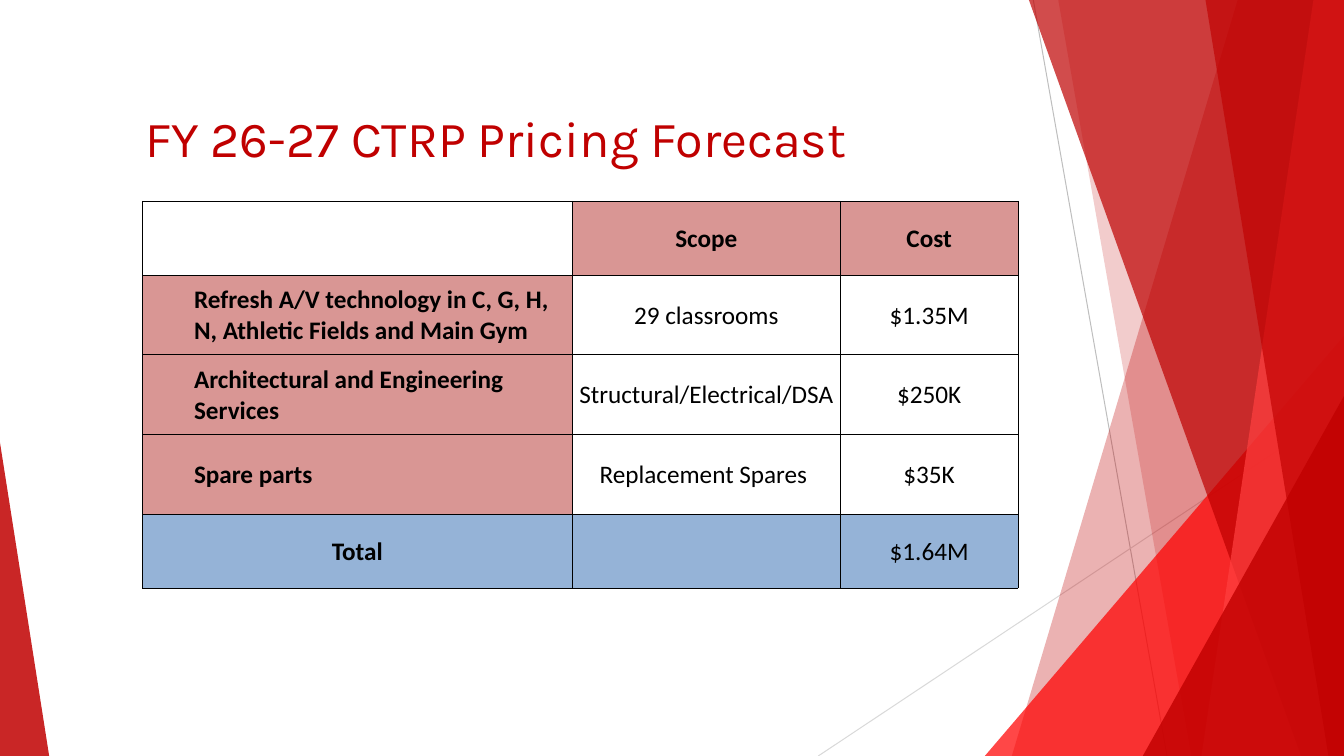
from lxml.etree import SubElement
from pptx import Presentation
from pptx.dml.color import RGBColor
from pptx.enum.shapes import MSO_CONNECTOR
from pptx.enum.text import MSO_ANCHOR, PP_ALIGN
from pptx.oxml.ns import qn
from pptx.util import Cm, Pt

DARK_RED = RGBColor(0xC0, 0x00, 0x00)
DEEP_RED = RGBColor(0xBE, 0x00, 0x00)
BRIGHT_RED = RGBColor(0xFF, 0x00, 0x00)
LIGHT_RED = RGBColor(0xFF, 0x40, 0x40)
ROSE = RGBColor(0xD9, 0x96, 0x94)
SKY = RGBColor(0x95, 0xB3, 0xD7)
MID_GREY = RGBColor(0xBE, 0xBE, 0xBE)
PALE_GREY = RGBColor(0xD9, 0xD9, 0xD9)
BLACK = RGBColor(0, 0, 0)
WHITE = RGBColor(0xFF, 0xFF, 0xFF)

# Slide size in centimetres
RIGHT, BOTTOM = 33.87, 19.05
CORNER = (RIGHT, BOTTOM)

# Left edge of each facet from top to foot, colour, opacity in percent
FACETS = [
    ([(31.19, 0), (25.5, BOTTOM)], DARK_RED, 30),
    ([(26.67, 0), (30.02, BOTTOM)], DARK_RED, 20),
    ([(RIGHT, 8.46), (24.82, BOTTOM)], BRIGHT_RED, 72),
    ([(25.93, 0), (32.79, BOTTOM)], DEEP_RED, 70),
    ([(33.1, 0), (30.28, BOTTOM)], LIGHT_RED, 70),
    ([(30.38, 0), (33.48, BOTTOM)], DARK_RED, 65),
    ([(RIGHT, 9.98), (28.8, BOTTOM)], DARK_RED, 80),
]

COLUMN_WIDTHS = [10.83, 6.76, 4.47]
ROW_HEIGHTS = [1.86, 2.01, 2.01, 2.01, 1.86]
ROWS = [
    ["", "Scope", "Cost"],
    ["Refresh A/V technology in C, G, H, N, Athletic Fields and Main Gym",
     "29 classrooms", "$1.35M"],
    ["Architectural and Engineering Services",
     "Structural/Electrical/DSA", "$250K"],
    ["Spare parts", "Replacement Spares ", "$35K"],
    ["Total", "", "$1.64M"],
]


def add_hairline(page, start, end, color):
    line = page.shapes.add_connector(
        MSO_CONNECTOR.STRAIGHT, *map(Cm, start), *map(Cm, end))
    line.line.color.rgb = color
    line.line.width = Pt(0.72)
    SubElement(line.element.spPr, qn("a:effectLst"))


def add_facet(page, points, color, opacity):
    corners = [(Cm(x), Cm(y)) for x, y in points]
    builder = page.shapes.build_freeform(*corners[0])
    builder.add_line_segments(corners[1:], close=True)
    facet = builder.convert_to_shape()
    facet.shadow.inherit = False
    facet.line.fill.background()
    facet.fill.solid()
    facet.fill.fore_color.rgb = color
    tint = facet.element.spPr.find(qn("a:solidFill")).find(qn("a:srgbClr"))
    SubElement(tint, qn("a:alpha"), val=str(opacity * 1000))


def add_title(page, text):
    title = page.shapes.title
    title.left, title.top = Cm(3.66), Cm(2.54)
    title.width, title.height = Cm(19), Cm(3.07)
    frame = title.text_frame
    frame.margin_left = frame.margin_right = frame.margin_bottom = 0
    frame.margin_top = Cm(0.15)
    frame.vertical_anchor = MSO_ANCHOR.TOP
    frame.word_wrap = True
    para = frame.paragraphs[0]
    para.text = text
    para.alignment = PP_ALIGN.LEFT
    para.font.name = "Karla"
    para.font.size = Pt(36)
    para.font.color.rgb = DARK_RED
    # Bring the title in front of the facets
    title.element.getparent().append(title.element)


def add_borders(cell):
    properties = cell._tc.get_or_add_tcPr()
    for side in ("a:lnL", "a:lnR", "a:lnT", "a:lnB"):
        border = SubElement(properties, qn(side), w=str(Pt(0.5)))
        fill = SubElement(border, qn("a:solidFill"))
        SubElement(fill, qn("a:srgbClr"), val=str(BLACK))


def format_cell(cell, text, fill, bold, indented):
    add_borders(cell)
    cell.fill.solid()
    cell.fill.fore_color.rgb = fill
    cell.margin_left = cell.margin_right = cell.margin_top = Cm(0.03)
    cell.margin_bottom = 0
    cell.vertical_anchor = MSO_ANCHOR.MIDDLE
    para = cell.text_frame.paragraphs[0]
    para.text = text
    if indented:
        para.level = 1
        properties = para._p.get_or_add_pPr()
        properties.set("marL", str(Cm(1.27)))
        properties.set("indent", "0")
    para.alignment = PP_ALIGN.LEFT if indented else PP_ALIGN.CENTER
    para.font.name = "Calibri"
    para.font.size = Pt(18)
    para.font.bold = bold
    para.font.color.rgb = BLACK


def add_forecast_table(page):
    table = page.shapes.add_table(
        len(ROWS), len(COLUMN_WIDTHS), Cm(3.59), Cm(5.07),
        Cm(sum(COLUMN_WIDTHS)), Cm(sum(ROW_HEIGHTS))).table
    table.horz_banding = False
    table.first_row = False
    for column, width in zip(table.columns, COLUMN_WIDTHS):
        column.width = Cm(width)
    for row, height in zip(table.rows, ROW_HEIGHTS):
        row.height = Cm(height)
    total = len(ROWS) - 1
    for r, texts in enumerate(ROWS):
        for c, text in enumerate(texts):
            heading = r == 0 or c == 0
            if r == total:
                fill = SKY
            else:
                fill = ROSE if heading and text else WHITE
            format_cell(table.cell(r, c), text, fill, heading,
                        c == 0 and 0 < r < total)


def main():
    deck = Presentation()
    deck.slide_width, deck.slide_height = Cm(RIGHT), Cm(BOTTOM)
    page = deck.slides.add_slide(deck.slide_layouts[5])

    # Background decoration
    add_hairline(page, (26.04, 0), (29.41, BOTTOM), MID_GREY)
    add_hairline(page, (RIGHT, 10.24), (20.62, BOTTOM), PALE_GREY)
    for edge, color, opacity in FACETS:
        top = (RIGHT, edge[0][1])
        outline = edge if edge[0] == top else [top] + edge
        add_facet(page, outline + [CORNER], color, opacity)
    add_facet(page, [(0, 11.15), (0, BOTTOM), (1.24, BOTTOM)], DARK_RED, 85)

    # Content
    add_title(page, "FY 26-27 CTRP Pricing Forecast")
    add_forecast_table(page)
    deck.save("out.pptx")


if __name__ == "__main__":
    main()
